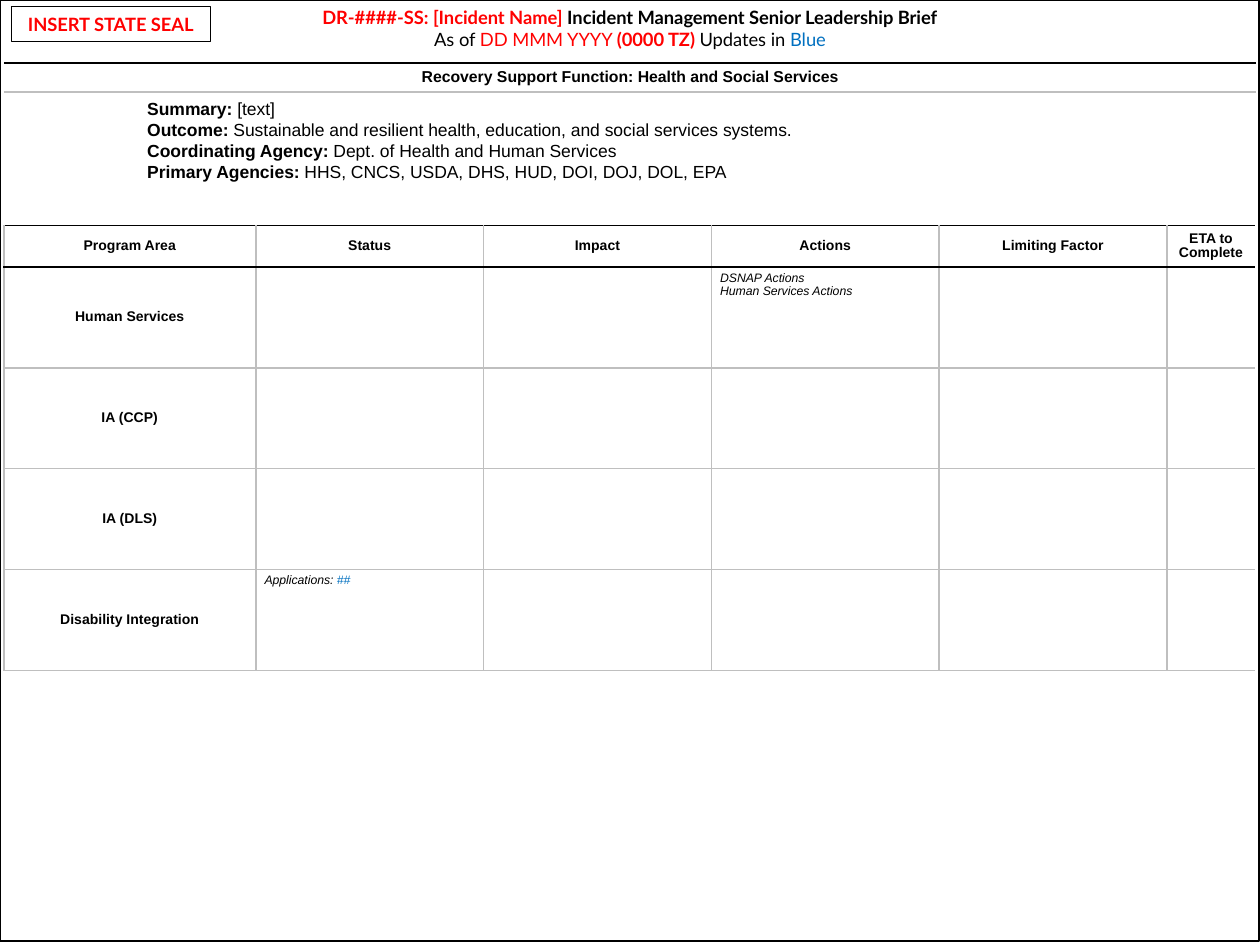
from lxml.etree import SubElement
from pptx import Presentation
from pptx.dml.color import RGBColor
from pptx.enum.shapes import MSO_SHAPE as Shape
from pptx.enum.text import MSO_ANCHOR as Anchor, MSO_AUTO_SIZE as AutoSize, PP_ALIGN as Align
from pptx.oxml.ns import qn
from pptx.util import Inches, Pt

COLORS = {"black": "000000", "red": "FF0000", "blue": "0070C0", "grey": "BFBFBF"}

presentation = Presentation()
presentation.slide_width, presentation.slide_height = Inches(10), Inches(7.5)
slide = presentation.slides.add_slide(presentation.slide_layouts[5])

# Grid of 100 columns by 75 rows
column = presentation.slide_width / 100
row = presentation.slide_height / 75


def write(frame, lines, size, font="Arial", align=Align.LEFT, anchor=Anchor.TOP,
          italic=False, spacing=None):
    """Fill a text frame; each line is a list of (text, color, bold) runs."""
    frame.word_wrap = True
    frame.vertical_anchor = anchor
    for index, runs in enumerate(lines):
        paragraph = frame.add_paragraph() if index else frame.paragraphs[0]
        paragraph.alignment = align
        if spacing:
            paragraph.line_spacing = spacing
        for text, color, bold in runs:
            run = paragraph.add_run()
            run.text = text
            run.font.name, run.font.size = font, Pt(size)
            run.font.bold, run.font.italic = bold, italic
            run.font.color.rgb = RGBColor.from_string(COLORS[color])


def style_cell(cell, **borders):
    """Set margins, 1 pt borders for the named sides (L, R, T, B) and no fill."""
    cell.margin_left = cell.margin_right = Inches(0.07)
    cell.margin_top = cell.margin_bottom = Inches(0.03)
    properties = cell._tc.get_or_add_tcPr()
    for side in "LRTB":
        line = SubElement(properties, qn(f"a:ln{side}"), w=str(Pt(1)))
        if side in borders:
            fill = SubElement(line, qn("a:solidFill"))
            SubElement(fill, qn("a:srgbClr"), val=COLORS[borders[side]])
        else:
            SubElement(line, qn("a:noFill"))
    cell.fill.background()


# Title
title = slide.shapes.title
title.left, title.top = 0, 0
title.width, title.height = presentation.slide_width, int(row * 4.5)
title.text_frame.auto_size = AutoSize.NONE
write(title.text_frame, [
    [("DR-####-SS: [Incident Name] ", "red", True),
     ("Incident Management Senior Leadership Brief", "black", True)],
    [("As of ", "black", False), ("DD MMM YYYY ", "red", False), ("(0000 TZ) ", "red", True),
     ("Updates in ", "black", False), ("Blue", "blue", False)],
], 10.5, font="Lato", align=Align.CENTER)

# State seal box and page frame
boxes = []
for left, top, width, height, weight in [(0.9, 0.5, 15.8, 2.8, 0.75), (0, 0, 99.9, 74.7, 1)]:
    box = slide.shapes.add_shape(Shape.RECTANGLE, int(column * left), int(row * top),
                                 int(column * width), int(row * height))
    box.shadow.inherit = False
    box.fill.background()
    box.line.color.rgb = RGBColor.from_string(COLORS["black"])
    box.line.width = Pt(weight)
    boxes.append(box)
write(boxes[0].text_frame, [[("INSERT STATE SEAL", "red", True)]], 10.5, font="Lato",
      align=Align.CENTER, anchor=Anchor.MIDDLE)

# Section bar and program table
tables = []
for top, widths, heights in [
    (5, [99.4], [2.3]),
    (17.9, [20] + [18.08] * 4 + [7], [3.3] + [8] * 4),
]:
    table = slide.shapes.add_table(
        len(heights), len(widths), int(column * 0.3), int(row * top),
        int(column * sum(widths)), int(row * sum(heights))).table
    table.first_row = table.horz_banding = False
    for table_column, width in zip(table.columns, widths):
        table_column.width = int(column * width)
    for table_row, height in zip(table.rows, heights):
        table_row.height = int(row * height)
    tables.append(table)
section, programs = tables

style_cell(section.cell(0, 0), T="black", B="grey")
write(section.cell(0, 0).text_frame,
      [[("Recovery Support Function: Health and Social Services", "black", True)]],
      9, align=Align.CENTER)
section.cell(0, 0).vertical_anchor = Anchor.MIDDLE

# Summary
summary = slide.shapes.add_textbox(int(column * 10.7), int(row * 7.3),
                                   int(column * 84.5), int(row * 7.7))
facts = [
    ("Summary: ", "[text]"),
    ("Outcome: ", "Sustainable and resilient health, education, and social services systems."),
    ("Coordinating Agency: ", "Dept. of Health and Human Services"),
    ("Primary Agencies: ", "HHS, CNCS, USDA, DHS, HUD, DOI, DOJ, DOL, EPA"),
]
write(summary.text_frame,
      [[(label, "black", True), (value, "black", False)] for label, value in facts],
      10, spacing=Pt(12))

# Program table: black rules around the header, grey elsewhere, open right edge
headers = ["Program Area", "Status", "Impact", "Actions", "Limiting Factor", "ETA to Complete"]
areas = ["Human Services", "IA (CCP)", "IA (DLS)", "Disability Integration"]
labels = {(0, c): text for c, text in enumerate(headers)}
labels.update({(r, 0): text for r, text in enumerate(areas, 1)})
notes = {
    (1, 3): [[("DSNAP Actions", "black", False)], [("Human Services Actions", "black", False)]],
    (4, 1): [[("Applications: ", "black", False), ("##", "blue", False)]],
}
for r in range(len(areas) + 1):
    for c in range(len(headers)):
        cell = programs.cell(r, c)
        borders = {"L": "grey", "T": "black" if r < 2 else "grey",
                   "B": "black" if r == 0 else "grey"}
        if c < len(headers) - 1:
            borders["R"] = "grey"
        style_cell(cell, **borders)
        if (r, c) in labels:
            write(cell.text_frame, [[(labels[r, c], "black", True)]], 8,
                  align=Align.CENTER, spacing=0.9)
            cell.vertical_anchor = Anchor.MIDDLE
        elif (r, c) in notes:
            write(cell.text_frame, notes[r, c], 7, italic=True)

presentation.save("out.pptx")
